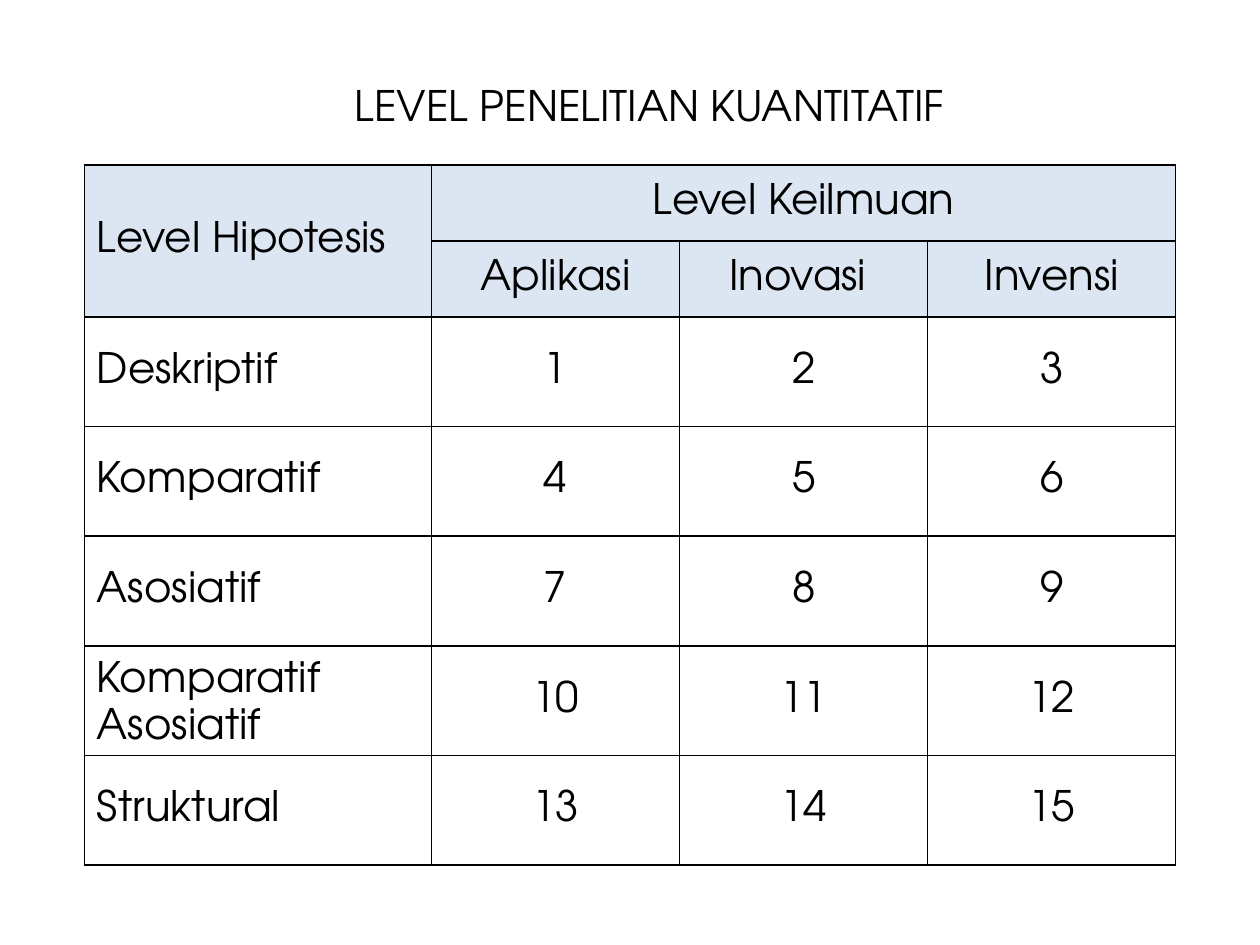
from lxml.etree import SubElement, fromstring
from pptx import Presentation
from pptx.dml.color import RGBColor
from pptx.enum.text import MSO_ANCHOR as Anchor, PP_ALIGN as Align
from pptx.oxml.ns import nsdecls, qn
from pptx.util import Cm, Pt


def write(frame, text, align=Align.LEFT, size=24, color="000000",
          font="TeX Gyre Adventor", spacing=1.0):
    paragraph = frame.paragraphs[0]
    paragraph.alignment = align
    paragraph.line_spacing = spacing
    run = paragraph.add_run()
    run.text = text
    run.font.name = font
    run.font.size = Pt(size)
    run.font.color.rgb = RGBColor.from_string(color)


def add_borders(cell, color="000000", width=1):
    properties = cell._tc.get_or_add_tcPr()
    for index, side in enumerate(("lnL", "lnR", "lnT", "lnB")):
        line = fromstring(f'<a:{side} {nsdecls("a")} w="{Pt(width)}"/>')
        SubElement(SubElement(line, qn("a:solidFill")), qn("a:srgbClr"), val=color)
        properties.insert(index, line)


HEADER_FILL = "DCE6F2"
HEADER_ROWS = [
    ["Level Hipotesis", "Level Keilmuan", "", ""],
    ["", "Aplikasi", "Inovasi ", "Invensi"],
]
TWO_LINE_LABEL = "Komparatif Asosiatif"
HYPOTHESES = ["Deskriptif", "Komparatif", "Asosiatif", TWO_LINE_LABEL, "Struktural"]
levels = HEADER_ROWS + [
    [hypothesis] + [str(3 * i + n) for n in (1, 2, 3)]
    for i, hypothesis in enumerate(HYPOTHESES)
]
column_widths = [7] + [5] * 3
row_heights = [1.53] * 2 + [2.21] * 5

prs = Presentation()
prs.slide_width, prs.slide_height = Cm(25.4), Cm(19.05)
slide = prs.slides.add_slide(prs.slide_layouts[5])

title = slide.shapes.title
title.left, title.top, title.width, title.height = Cm(6.9), Cm(1.47), Cm(14.8), Cm(1.28)
title.text_frame.vertical_anchor = Anchor.TOP
write(title.text_frame, "LEVEL PENELITIAN KUANTITATIF")

grid = slide.shapes.add_table(
    len(levels), len(column_widths), Cm(1.7), Cm(3.33),
    Cm(sum(column_widths)), Cm(sum(row_heights))).table
for column, width in zip(grid.columns, column_widths):
    column.width = Cm(width)
for row, height in zip(grid.rows, row_heights):
    row.height = Cm(height)
grid.cell(0, 0).merge(grid.cell(1, 0))
grid.cell(0, 1).merge(grid.cell(0, 3))

for r, row in enumerate(levels):
    for c, text in enumerate(row):
        cell = grid.cell(r, c)
        cell.vertical_anchor = Anchor.MIDDLE
        if r < len(HEADER_ROWS):
            cell.fill.solid()
            cell.fill.fore_color.rgb = RGBColor.from_string(HEADER_FILL)
        else:
            cell.fill.background()
        add_borders(cell)
        if text:
            # The wrapped label needs room between its descenders and the line below
            write(cell.text_frame, text, align=Align.CENTER if c else Align.LEFT,
                  spacing=1.2 if text == TWO_LINE_LABEL else 1.0)

prs.save("out.pptx")
